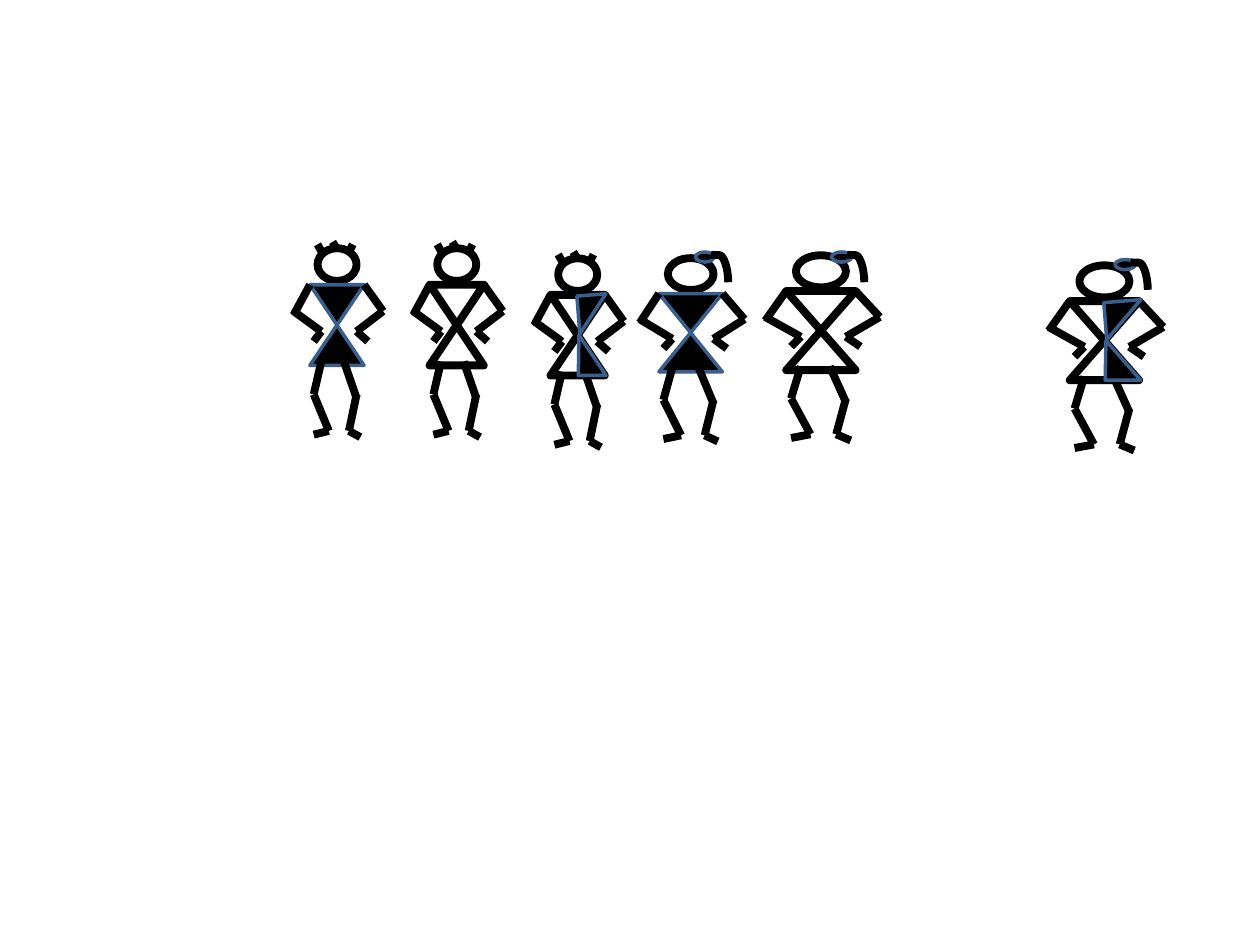
from lxml import etree
from pptx import Presentation
from pptx.dml.color import RGBColor
from pptx.enum import shapes as kinds
from pptx.oxml.ns import qn
from pptx.util import Inches, Pt

BLACK = RGBColor(0x00, 0x00, 0x00)
WHITE = RGBColor(0xFF, 0xFF, 0xFF)
BLUE = RGBColor(0x3A, 0x5F, 0x8C)
THICK = {"color": BLACK, "width": Pt(4.5)}
THIN = {"color": BLUE, "width": Pt(2)}

# Figures: left shoulder, scale (x, y), dress, ponytail tie (None: short hair)
FIGURES = [
    ((2.46, 2.26), (1, 1), "black", None),
    ((3.41, 2.26), (1, 1), "white", None),
    ((4.37, 2.34), (1, 1), "half", None),
    ((5.23, 2.33), (1.17, 0.97), "black", (5.52, 2.0)),
    ((8.49, 2.39), (1.28, 0.98), "half", (8.85, 2.06)),
    ((6.24, 2.31), (1.28, 0.98), "white", (6.6, 2.0)),
]

# Body parts, measured from the left shoulder: left, top, width, height
HEAD = (0.06, -0.29, 0.31, 0.26)
SKIRT = (0, 0.32, 0.43, 0.32)
BODICE = (0, 0, 0.43, 0.32)
HALF_SKIRT = (0.22, 0.32, 0.22, 0.32)
HALF_BODICE = (0.22, 0, 0.23, 0.3)

# Strokes, measured from the left shoulder: x1, y1, x2, y2
LIMBS = [
    (0, 0, -0.13, 0.24), (0.09, 0.37, -0.13, 0.21), (0.09, 0.37, 0.03, 0.45),  # left arm
    (0.43, 0, 0.58, 0.21), (0.37, 0.37, 0.58, 0.21), (0.37, 0.37, 0.46, 0.45),  # right arm
    (0.09, 0.61, 0.03, 0.87), (0.03, 0.87, 0.15, 1.16), (0.15, 1.16, 0.03, 1.19),  # left leg
    (0.27, 0.61, 0.37, 0.9), (0.37, 0.87, 0.31, 1.16), (0.4, 1.21, 0.31, 1.16),  # right leg
]
HAIR = [(0.1, -0.25, 0.06, -0.32), (0.21, -0.29, 0.18, -0.34), (0.31, -0.26, 0.34, -0.32)]


def set_line(part, style):
    part.line.color.rgb = style["color"]
    part.line.width = style["width"]


def add_part(group, kind, box, fill, style, rotation=0, peak=None):
    part = group.shapes.add_shape(kind, *map(Inches, box))
    part.shadow.inherit = False
    part.fill.solid()
    part.fill.fore_color.rgb = fill
    set_line(part, style)
    part.rotation = rotation
    if peak is not None:
        part.adjustments[0] = peak


def add_stroke(group, ends, kind=kinds.MSO_CONNECTOR.STRAIGHT):
    stroke = group.shapes.add_connector(kind, *map(Inches, ends))
    set_line(stroke, THICK)
    etree.SubElement(stroke._element.spPr, qn("a:effectLst"))
    return stroke


def add_ponytail(group, tie, scale):
    x, y = tie
    add_part(group, kinds.MSO_SHAPE.OVAL, (x, y, 0.125 * scale[0], 0.08), BLACK, THIN)
    # Drawn lying down, then turned upright about its centre
    cx, cy, length, spread = x + 0.19, y + 0.13, 0.22, 0.14
    tail = add_stroke(group, (cx + length / 2, cy - spread / 2, cx - length / 2, cy + spread / 2),
                      kinds.MSO_CONNECTOR.CURVE)
    properties = tail._element.spPr
    properties.find(qn("a:xfrm")).set("rot", str(270 * 60000))
    geometry = properties.find(qn("a:prstGeom"))
    guides = geometry.find(qn("a:avLst"))
    if guides is None:
        guides = etree.SubElement(geometry, qn("a:avLst"))
    etree.SubElement(guides, qn("a:gd"), name="adj1", fmla="val 2200")


def add_figure(slide, shoulder, scale, dress, tie):
    group = slide.shapes.add_group_shape()

    def place(box):
        x, y, width, height = box
        return (shoulder[0] + x * scale[0], shoulder[1] + y * scale[1],
                width * scale[0], height * scale[1])

    def join(ends):
        return [shoulder[i % 2] + value * scale[i % 2] for i, value in enumerate(ends)]

    # Head and dress
    triangle = kinds.MSO_SHAPE.ISOSCELES_TRIANGLE
    fill, style = (BLACK, THIN) if dress == "black" else (WHITE, THICK)
    add_part(group, kinds.MSO_SHAPE.OVAL, place(HEAD), WHITE, THICK)
    add_part(group, triangle, place(SKIRT), fill, style)
    add_part(group, triangle, place(BODICE), fill, style, rotation=180)

    # Arms and legs
    for limb in LIMBS:
        add_stroke(group, join(limb))

    # Dark half of the dress
    if dress == "half":
        add_part(group, triangle, place(HALF_SKIRT), BLACK, THIN, peak=0.02)
        add_part(group, triangle, place(HALF_BODICE), BLACK, THIN, rotation=175.4, peak=1)

    # Hair
    if tie:
        add_ponytail(group, tie, scale)
    else:
        for tuft in HAIR:
            add_stroke(group, join(tuft))


def main():
    deck = Presentation()
    deck.slide_width, deck.slide_height = Inches(10), Inches(7.5)
    slide = deck.slides.add_slide(deck.slide_layouts[6])
    for figure in FIGURES:
        add_figure(slide, *figure)
    deck.save("out.pptx")


if __name__ == "__main__":
    main()
